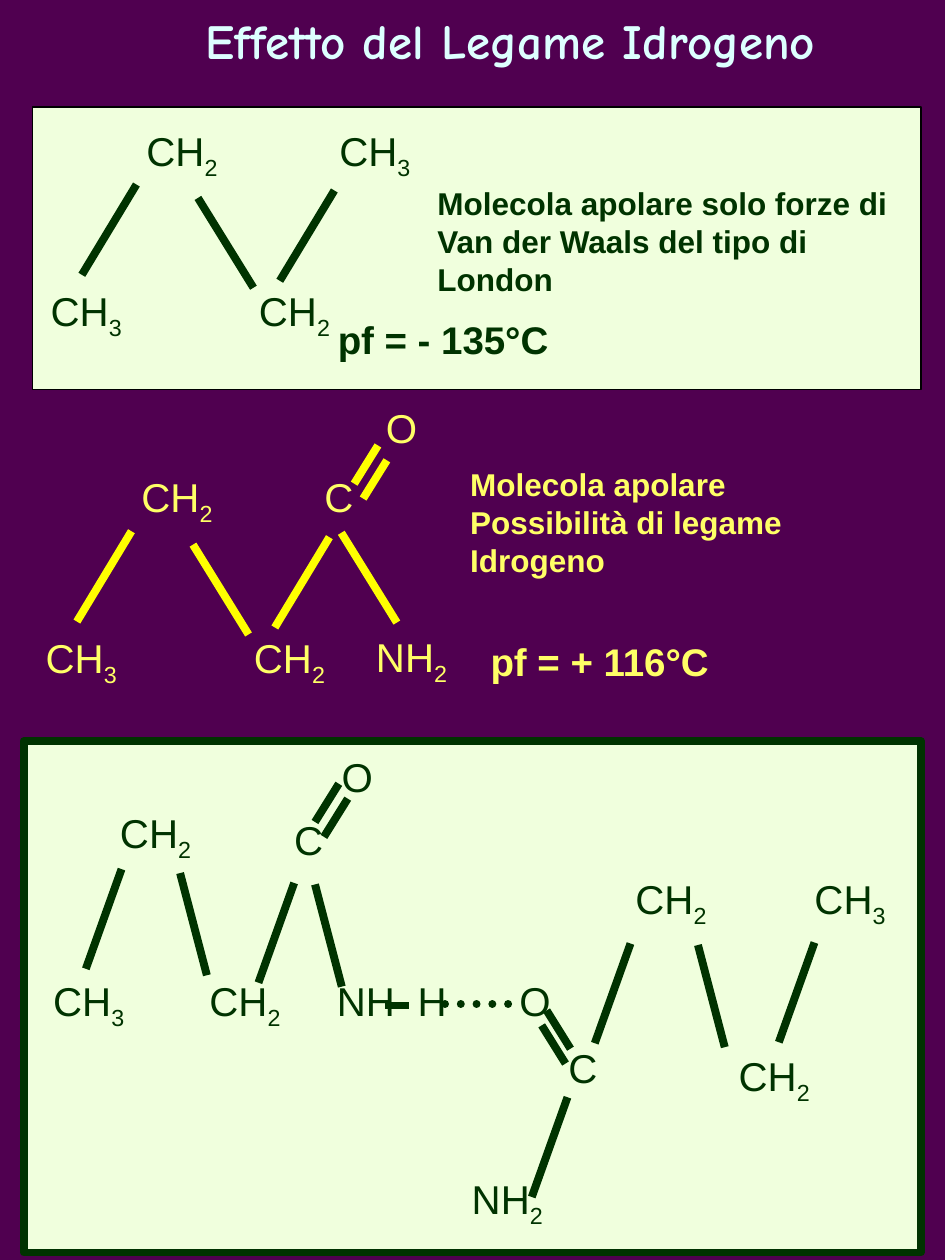
from lxml import etree
from pptx import Presentation
from pptx.dml.color import RGBColor
from pptx.enum.dml import MSO_LINE
from pptx.enum.shapes import MSO_CONNECTOR, MSO_SHAPE
from pptx.enum.text import MSO_ANCHOR, MSO_AUTO_SIZE, PP_ALIGN
from pptx.oxml.ns import qn
from pptx.util import Cm, Pt

PURPLE = RGBColor(0x50, 0x00, 0x50)
PALE = RGBColor(0xF0, 0xFF, 0xDD)
GREEN = RGBColor(0x00, 0x33, 0x00)
BLACK = RGBColor(0x00, 0x00, 0x00)
CREAM = RGBColor(0xFF, 0xFF, 0x66)
YELLOW = RGBColor(0xFF, 0xFF, 0x00)
ICE = RGBColor(0xDD, 0xFF, 0xFF)

RECT = MSO_SHAPE.RECTANGLE
STRAIGHT = MSO_CONNECTOR.STRAIGHT
DOTS = MSO_LINE.ROUND_DOT
TOP = MSO_ANCHOR.TOP
LEFT = PP_ALIGN.LEFT
GROW = MSO_AUTO_SIZE.SHAPE_TO_FIT_TEXT
FIXED = MSO_AUTO_SIZE.NONE

# Widths of the short atom labels; the others share one width
WIDTHS = {"C": 0.89, "H": 0.89, "O": 0.94, "NH": 1.6}

# Bond vectors: wide zigzag, steep zigzag
RISE, FALL = (1.1, -1.82), (1.12, 1.81)
STEEP, DROP = (0.72, -2.01), (0.54, 2.06)


class Page:
    def __init__(self, slide):
        self.slide = slide
        self.shapes = slide.shapes
        self.ink = self.stroke = GREEN

    def colour(self, ink, stroke):
        self.ink, self.stroke = ink, stroke

    def group(self):
        self.shapes = self.slide.shapes.add_group_shape().shapes

    def frame(self, x, y, w, h, line, width):
        box = self.shapes.add_shape(RECT, Cm(x), Cm(y), Cm(w), Cm(h))
        box.shadow.inherit = False
        box.fill.solid()
        box.fill.fore_color.rgb = PALE
        box.line.color.rgb = line
        box.line.width = Pt(width)

    def format(self, frame, wrap):
        frame.word_wrap = wrap
        frame.vertical_anchor = TOP
        frame.margin_left = frame.margin_right = Cm(0.16)
        frame.margin_top = frame.margin_bottom = Cm(0.08)

    def style(self, para, size, bold, colour, face="Arial"):
        para.alignment = LEFT
        para.font.name = face
        para.font.size = Pt(size)
        para.font.bold = bold
        para.font.color.rgb = colour

    def title(self, text, x, y, w, h):
        box = self.slide.shapes.title
        box.left, box.top, box.width, box.height = Cm(x), Cm(y), Cm(w), Cm(h)
        frame = box.text_frame
        frame.text = text
        self.format(frame, True)
        frame.auto_size = FIXED
        self.style(frame.paragraphs[0], 28, True, ICE, "Comic Neue")

    def text(self, text, x, y, w, h, size, bold=True, wrap=True):
        box = self.shapes.add_textbox(Cm(x), Cm(y), Cm(w), Cm(h))
        frame = box.text_frame
        frame.text = text
        self.format(frame, wrap)
        frame.auto_size = GROW
        for para in frame.paragraphs:
            self.style(para, size, bold, self.ink)
        return frame.paragraphs[0]

    def atom(self, name, x, y):
        base = name.rstrip("23")
        width = WIDTHS.get(name, 1.78)
        para = self.text(base, x, y, width, 1.14, 23, False, False)
        if name != base:
            sub = para.add_run()
            sub.text = name[len(base):]
            sub._r.get_or_add_rPr().set("baseline", "-25000")

    def bond(self, x, y, step, dash=None):
        dx, dy = step
        line = self.shapes.add_connector(
            STRAIGHT, Cm(x), Cm(y), Cm(x + dx), Cm(y + dy))
        line.line.color.rgb = self.stroke
        line.line.width = Pt(4.5)
        props = line._element.spPr
        if dash:
            line.line.dash_style = dash
            props.find(qn("a:ln")).set("cap", "rnd")
        etree.SubElement(props, qn("a:effectLst"))

    def double(self, x, y, step, shift):
        self.bond(x, y, step)
        self.bond(x + shift, y + 0.3, step)

    def chain(self, x, y):
        """Draw the three-carbon zigzag shared by the upper molecules."""
        self.atom("CH3", x, y + 3.23)
        self.atom("CH2", x + 1.93, y)
        self.atom("CH2", x + 4.2, y + 3.23)
        self.bond(x + 0.79, y + 3.08, RISE)
        self.bond(x + 4.78, y + 3.2, RISE)
        self.bond(x + 3.13, y + 1.53, FALL)


def main():
    deck = Presentation()
    deck.slide_width, deck.slide_height = Cm(19.05), Cm(25.4)
    slide = deck.slides.add_slide(deck.slide_layouts[5])
    slide.background.fill.solid()
    slide.background.fill.fore_color.rgb = PURPLE
    page = Page(slide)
    page.title("Effetto del Legame Idrogeno", 3.99, 0.13, 14.45, 1.35)

    # Panels
    page.frame(0.48, 14.94, 18.08, 10.31, GREEN, 4.5)
    page.frame(0.66, 2.16, 17.91, 5.69, BLACK, 0.75)

    # Butane
    page.chain(0.86, 2.46)
    page.atom("CH3", 6.68, 2.46)
    page.text("Molecola apolare solo forze di\nVan der Waals del tipo di London",
              8.66, 3.63, 9.86, 2.46, 18)
    page.text("pf = - 135°C", 6.65, 6.3, 4.6, 1.09, 22, wrap=False)

    # Amide
    page.colour(CREAM, YELLOW)
    page.chain(0.76, 9.45)
    page.atom("C", 6.38, 9.45)
    page.text("Molecola apolare Possibilità di legame Idrogeno",
              9.32, 9.3, 8.33, 2.46, 18)
    page.text("pf = + 116°C", 9.73, 12.78, 4.75, 1.09, 22, wrap=False)
    page.double(7.14, 9.75, (0.48, -0.77), 0.18)
    page.atom("O", 7.62, 8.05)
    page.atom("NH2", 7.42, 12.67)
    page.bond(6.88, 10.74, FALL)

    # Two amides joined by a hydrogen bond
    page.colour(GREEN, GREEN)
    page.group()
    for name, x, y in [
            ("CH3", 0.91, 19.61), ("CH2", 2.26, 16.21), ("CH2", 4.06, 19.61),
            ("C", 5.77, 16.36), ("O", 6.73, 15.09), ("NH", 6.63, 19.61),
            ("H", 8.26, 19.61), ("O", 10.31, 19.61), ("C", 11.3, 20.96),
            ("NH2", 9.35, 23.6), ("CH2", 12.65, 17.55),
            ("CH2", 14.73, 21.11), ("CH3", 16.26, 17.55)]:
        page.atom(name, x, y)
    for x, y in [(1.73, 19.53), (5.21, 19.81), (10.72, 24.13),
                 (11.99, 21.03), (15.7, 21.01)]:
        page.bond(x, y, STEEP)
    for x, y in [(3.63, 17.6), (6.35, 17.83), (14.07, 19.05)]:
        page.bond(x, y, DROP)
    page.double(6.35, 16.57, (0.48, -0.77), 0.18)
    page.double(11.02, 20.37, (0.48, 0.77), -0.1)
    page.bond(7.77, 20.27, (0.48, 0))
    page.bond(8.97, 20.24, (1.35, 0), DOTS)

    deck.save("out.pptx")


if __name__ == "__main__":
    main()
